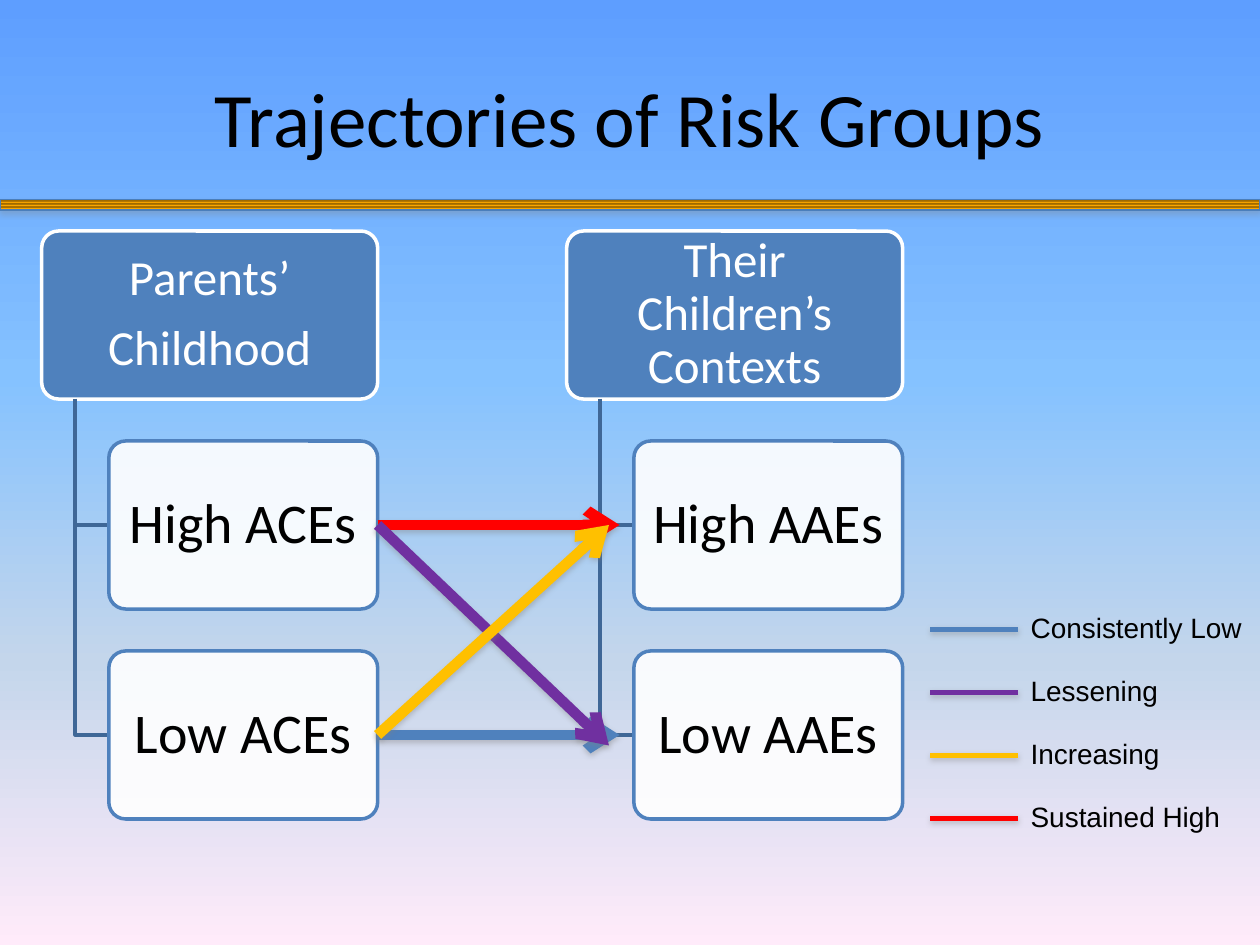
from lxml import etree
from pptx import Presentation, util as u
from pptx.dml.color import RGBColor
from pptx.enum import shapes, text
from pptx.oxml.ns import qn

Pt = u.Pt
COLORS = {
    "black": "000000", "white": "FFFFFF", "blue": "4F81BD", "edge": "4A7EBB",
    "branch": "3F6797", "red": "FF0000", "purple": "7030A0", "gold": "FFC000",
    "shadow": "808080",
}
SKY = [(0, "5E9EFF"), (40, "85C2FF"), (70, "C4D6EB"), (100, "FFEBFA")]
BAR = [(position, ("FFA800", "825600")[index % 2])
       for index, position in enumerate((0, 13, 28, 42, 57, 72, 87, 100))]
TITLE = "Trajectories of Risk Groups"
COLUMNS = [
    (23.8, ["Parents’", "Childhood"], ["High ACEs", "Low ACEs"]),
    (323.8, ["Their Children’s Contexts"], ["High AAEs", "Low AAEs"]),
]
ARROWS = [
    ("High ACEs", 354, 300, "red"),
    ("Low ACEs", 354, 420, "blue"),
    ("High ACEs", 348, 426, "purple"),
    ("Low ACEs", 348, 300, "gold"),
]
LEGEND = [("Consistently Low", "blue"), ("Lessening", "purple"),
          ("Increasing", "gold"), ("Sustained High", "red")]
HEADER_TOP, BOX_HEIGHT, ROW_STEP = 132, 96, 120
HEADER_WIDTH, CARD_WIDTH = 192, 153.6
CARD_INDENT, BRANCH_INDENT = 38.4, 19.2
LEGEND_LEFT, LEGEND_TOP, LEGEND_STEP, KEY_LENGTH = 531.5, 345.6, 36, 50.4


def rgb(name):
    return RGBColor.from_string(COLORS[name])


def set_line(shape, color, width):
    shape.line.color.rgb = rgb(color)
    shape.line.width = Pt(width)


def set_gradient(owner, fill, stops):
    fill.gradient()
    fill.gradient_angle = 270
    stop_list = next(owner._element.iter(qn("a:gsLst")))
    for stop in list(stop_list):
        stop_list.remove(stop)
    for position, color in stops:
        stop = etree.SubElement(stop_list, qn("a:gs"), pos=str(position * 1000))
        etree.SubElement(stop, qn("a:srgbClr"), val=color)


def add_shadow(shape, alpha, distance):
    properties = shape._element.spPr
    for effects in properties.findall(qn("a:effectLst")):
        properties.remove(effects)
    effects = etree.SubElement(properties, qn("a:effectLst"))
    outer = etree.SubElement(effects, qn("a:outerShdw"), blurRad=str(Pt(3.1)),
                             dist=str(Pt(distance)), dir="5400000", rotWithShape="0")
    color = etree.SubElement(outer, qn("a:srgbClr"), val=COLORS["shadow"])
    etree.SubElement(color, qn("a:alpha"), val=str(alpha * 1000))


def write(shape, lines, size, color="black", font="Calibri", align="CENTER",
          anchor="MIDDLE", inset=(7.2, 3.6), spacing=1.0):
    frame = shape.text_frame
    frame.word_wrap = True
    frame.vertical_anchor = text.MSO_ANCHOR[anchor]
    frame.margin_left = frame.margin_right = Pt(inset[0])
    frame.margin_top = frame.margin_bottom = Pt(inset[1])
    for index, line in enumerate(lines):
        paragraph = frame.add_paragraph() if index else frame.paragraphs[0]
        paragraph.text = line
        paragraph.alignment = text.PP_ALIGN[align]
        paragraph.line_spacing = spacing
        if index < len(lines) - 1:
            paragraph.space_after = Pt(0.35 * size)
        paragraph.font.size = Pt(size)
        paragraph.font.name = font
        paragraph.font.color.rgb = rgb(color)


def add_textbox(slide, left, top, width, height, content, size, **style):
    box = slide.shapes.add_textbox(Pt(left), Pt(top), Pt(width), Pt(height))
    write(box, [content], size, **style)


def add_box(slide, left, top, width, lines, size, fill, line, color):
    box = slide.shapes.add_shape(shapes.MSO_SHAPE.ROUNDED_RECTANGLE,
                                 Pt(left), Pt(top), Pt(width), Pt(BOX_HEIGHT))
    box.adjustments[0] = 0.1
    box.shadow.inherit = False
    box.fill.solid()
    box.fill.fore_color.rgb = rgb(fill)
    set_line(box, line, 2)
    write(box, lines, size, color=color, spacing=0.9)
    return box


def add_branch(slide, left, top, bottom, right):
    builder = slide.shapes.build_freeform(Pt(left), Pt(top))
    builder.add_line_segments([(Pt(left), Pt(bottom)), (Pt(right), Pt(bottom))], close=False)
    branch = builder.convert_to_shape()
    branch.shadow.inherit = False
    branch.fill.background()
    set_line(branch, "branch", 2)


def add_line(slide, start, end, color, width):
    line = slide.shapes.add_connector(shapes.MSO_CONNECTOR.STRAIGHT,
                                      *(Pt(value) for value in (*start, *end)))
    set_line(line, color, width)
    add_shadow(line, 38, 1.6)
    return line


def add_column(slide, left, heading, labels):
    add_box(slide, left, HEADER_TOP, HEADER_WIDTH, heading, 28, "blue", "white", "white")
    cards = {}
    card_left = left + CARD_INDENT
    for row, label in enumerate(labels, 1):
        top = HEADER_TOP + row * ROW_STEP
        add_branch(slide, left + BRANCH_INDENT, HEADER_TOP + BOX_HEIGHT,
                   top + BOX_HEIGHT / 2, card_left)
        card = add_box(slide, card_left, top, CARD_WIDTH, [label], 32, "white", "blue", "black")
        fill_color = card._element.spPr.find(qn("a:solidFill"))[0]
        etree.SubElement(fill_color, qn("a:alpha"), val="90000")
        cards[label] = card
    return cards


def main():
    presentation = Presentation()
    presentation.slide_width, presentation.slide_height = Pt(720), Pt(540)
    slide = presentation.slides.add_slide(presentation.slide_layouts[6])
    set_gradient(slide, slide.background.fill, SKY)

    add_textbox(slide, 36, 21.6, 648, 90, TITLE, 44)
    bar = slide.shapes.add_shape(shapes.MSO_SHAPE.RECTANGLE, 0, Pt(114), Pt(720), Pt(6))
    set_gradient(bar, bar.fill, BAR)
    set_line(bar, "edge", 0.75)
    add_shadow(bar, 35, 1.8)

    cards = {}
    for column in COLUMNS:
        cards.update(add_column(slide, *column))

    for source, end_x, end_y, color in ARROWS:
        arrow = add_line(slide, (0, 0), (end_x, end_y), color, 6)
        arrow.begin_connect(cards[source], 3)
        etree.SubElement(arrow.line._get_or_add_ln(), qn("a:tailEnd"), type="arrow")

    for index, (label, color) in enumerate(LEGEND):
        top = LEGEND_TOP + index * LEGEND_STEP
        key_end = LEGEND_LEFT + KEY_LENGTH
        add_line(slide, (LEGEND_LEFT, top + 14), (key_end, top + 14), color, 3)
        add_textbox(slide, key_end, top, 138, 26.6, label, 16,
                    font="Arial", align="LEFT", anchor="TOP")

    presentation.save("out.pptx")


if __name__ == "__main__":
    main()
